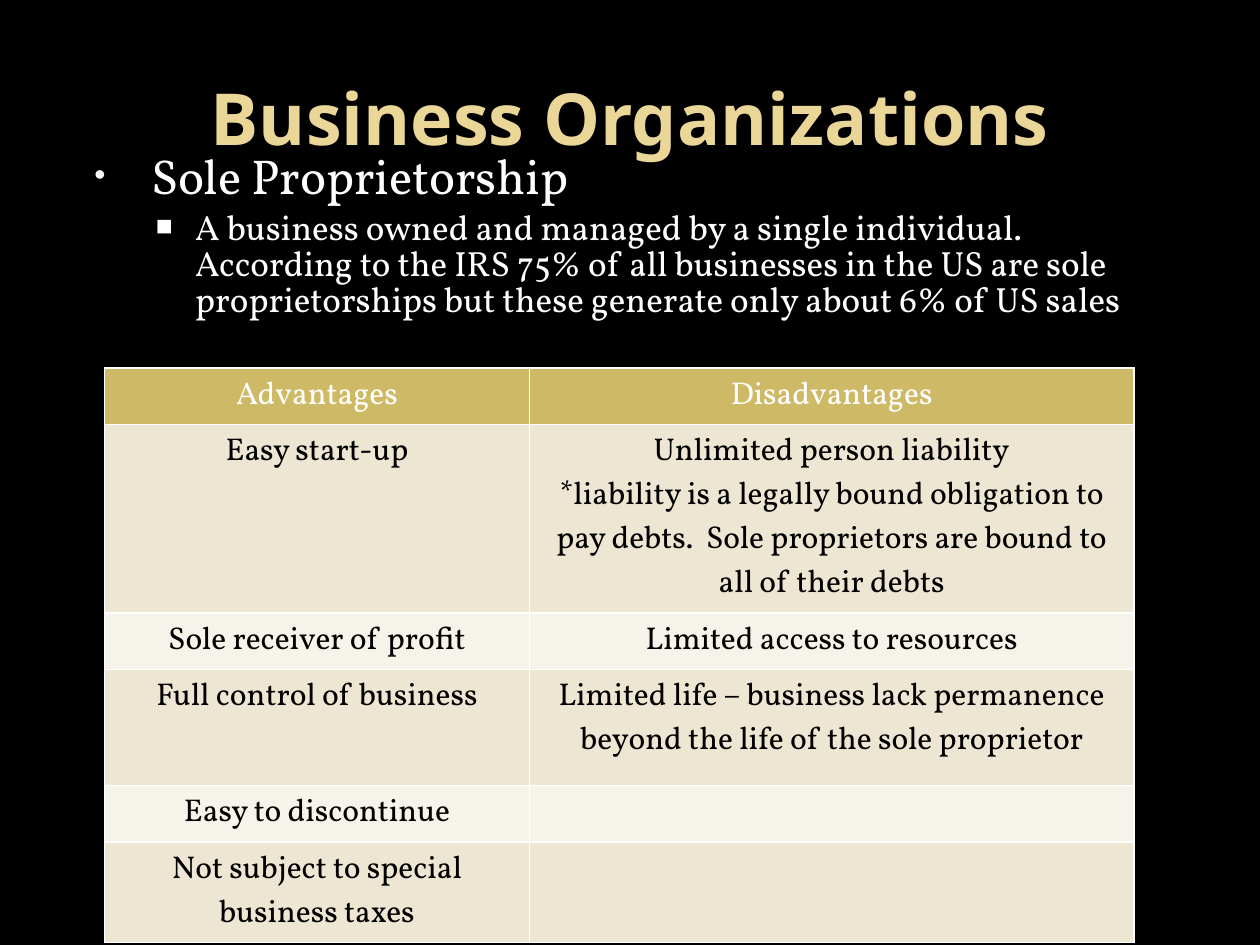
from lxml.etree import SubElement
from pptx import Presentation
from pptx.dml.color import RGBColor
from pptx.enum.text import MSO_ANCHOR, MSO_AUTO_SIZE, PP_ALIGN
from pptx.oxml.ns import qn
from pptx.util import Cm, Pt

COLORS = {
    "background": "000000",
    "title": "EAD696",
    "light": "FFFFFF",
    "dark": "000000",
    "first bullet": "F9F9F9",
    "header": "CEB966",
    "odd row": "EDE6D3",
    "even row": "F6F3EA",
}


def add_text(para, text, size, color, font="Vollkorn", bold=False):
    span = para.add_run()
    span.text = text
    span.font.name = font
    span.font.size = Pt(size)
    span.font.bold = bold
    span.font.color.rgb = RGBColor.from_string(COLORS[color])


def set_bullet(para, symbol, percent, color, margin, indent):
    properties = para._p.get_or_add_pPr()
    properties.set("marL", str(Cm(margin)))
    properties.set("indent", str(Cm(indent)))
    bullet_color = SubElement(properties, qn("a:buClr"))
    SubElement(bullet_color, qn("a:srgbClr"), val=COLORS[color])
    SubElement(properties, qn("a:buSzPct"), val=str(percent * 1000))
    SubElement(properties, qn("a:buFont"), typeface="Arial")
    SubElement(properties, qn("a:buChar"), char=symbol)


deck = Presentation()
deck.slide_width, deck.slide_height = Cm(25.4), Cm(19.05)
page = deck.slides.add_slide(deck.slide_layouts[1])
page.background.fill.solid()
page.background.fill.fore_color.rgb = RGBColor.from_string(COLORS["background"])

# Title
title = page.shapes.title
title.left, title.top, title.width, title.height = Cm(1.27), Cm(0.76), Cm(22.86), Cm(3.18)
title.text_frame.auto_size = MSO_AUTO_SIZE.NONE
title.text_frame.vertical_anchor = MSO_ANCHOR.MIDDLE
para = title.text_frame.paragraphs[0]
para.alignment = PP_ALIGN.CENTER
add_text(para, "Business Organizations", 41, "title", "Noto Sans", True)

# Definition list
body = page.placeholders[1]
body.left, body.top, body.width, body.height = Cm(1.27), Cm(2.97), Cm(22.86), Cm(14.55)
body.text_frame.auto_size = MSO_AUTO_SIZE.NONE
items = [
    ("Sole Proprietorship", 28, ("•", 65, "first bullet", 1.52, -1.14)),
    ("A business owned and managed by a single individual.  According to the IRS 75% of all "
     "businesses in the US are sole proprietorships but these generate only about 6% of US sales",
     20, ("■", 80, "light", 2.41, -0.79)),
]
for level, (text, size, bullet) in enumerate(items):
    para = body.text_frame.paragraphs[0] if level == 0 else body.text_frame.add_paragraph()
    para.level = level
    para.line_spacing = 0.86
    para.space_before = Pt(size * 0.2)
    set_bullet(para, *bullet)
    add_text(para, text, size, "light")

# Table of advantages and disadvantages, one list of paragraphs per cell
rows = [
    (0.99, ["Advantages"], ["Disadvantages"]),
    (3.73, ["Easy start-up"],
     ["Unlimited person liability",
      "*liability is a legally bound obligation to pay debts.  "
      "Sole proprietors are bound to all of their debts"]),
    (0.99, ["Sole receiver of profit"], ["Limited access to resources"]),
    (2.34, ["Full control of business"],
     ["Limited life – business lack permanence beyond the life of the sole proprietor"]),
    (0.99, ["Easy to discontinue"], []),
    (1.73, ["Not subject to special business taxes"], []),
]
table = page.shapes.add_table(len(rows), 2, Cm(2.11), Cm(7.42), Cm(20.75), Cm(10.77)).table
table.columns[0].width, table.columns[1].width = Cm(8.56), Cm(12.19)
for row_index, (height, *cell_texts) in enumerate(rows):
    table.rows[row_index].height = Cm(height)
    if row_index == 0:
        fill, ink = "header", "light"
    else:
        fill, ink = ("odd row" if row_index % 2 else "even row"), "dark"
    for column_index, texts in enumerate(cell_texts):
        cell = table.cell(row_index, column_index)
        cell.fill.solid()
        cell.fill.fore_color.rgb = RGBColor.from_string(COLORS[fill])
        for index, text in enumerate(texts):
            frame = cell.text_frame
            para = frame.paragraphs[0] if index == 0 else frame.add_paragraph()
            para.alignment = PP_ALIGN.CENTER
            add_text(para, text, 18, ink)

deck.save("out.pptx")
